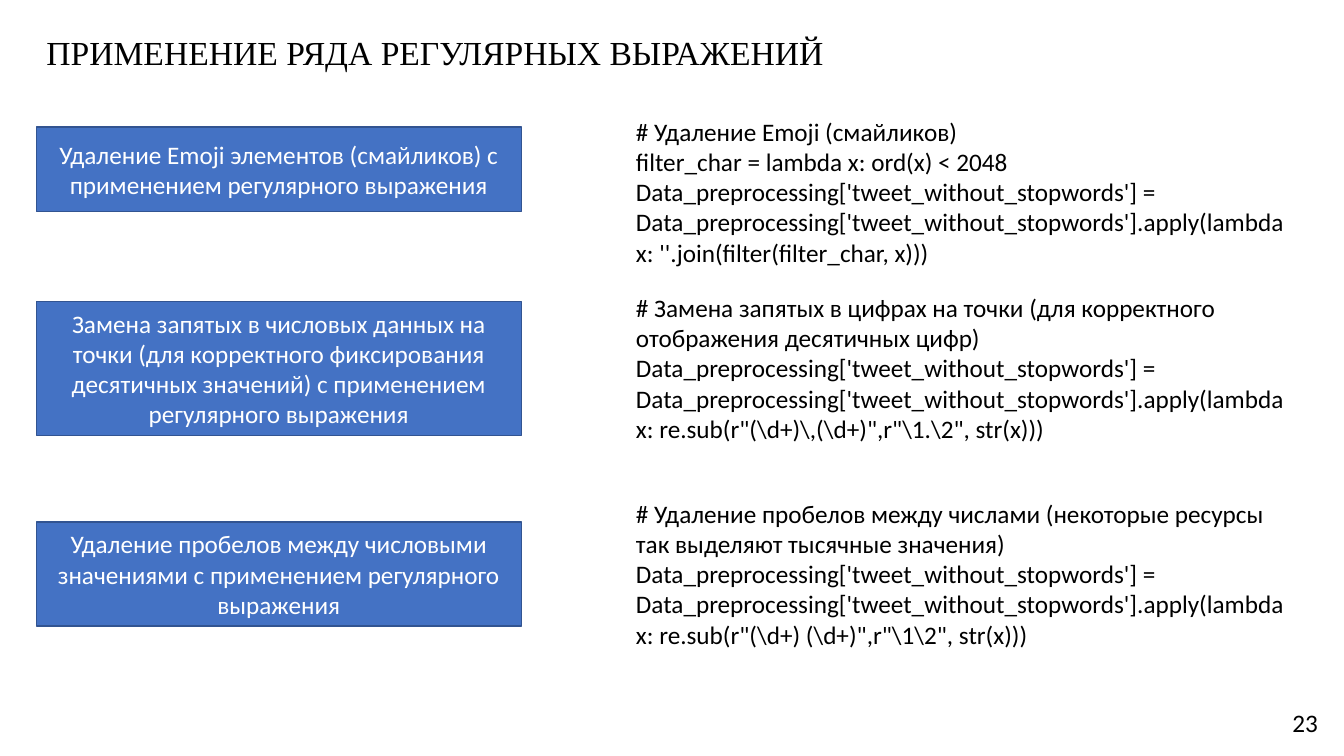
from dataclasses import dataclass

from pptx import Presentation
from pptx.dml.color import RGBColor as Color
from pptx.enum.shapes import MSO_SHAPE as Shape
from pptx.enum.text import MSO_ANCHOR as Anchor, MSO_AUTO_SIZE as Fit, PP_ALIGN as Align
from pptx.util import Inches, Pt


@dataclass(frozen=True)
class Theme:
    ink: Color = Color.from_string("000000")
    light: Color = Color.from_string("FFFFFF")
    fill: Color = Color.from_string("4472C4")
    edge: Color = Color.from_string("325491")
    head: str = "Times New Roman"
    body: str = "Calibri"
    large: Pt = Pt(24)
    small: Pt = Pt(18)
    line: Pt = Pt(1)


class Page:
    def __init__(self, deck, theme):
        self.theme = theme
        self.slide = deck.slides.add_slide(deck.slide_layouts[5])

    def label(self, shape, lines, color, align=Align.LEFT, anchor=Anchor.TOP,
              font=None, size=None):
        frame = shape.text_frame
        frame.word_wrap = True
        frame.auto_size = Fit.NONE
        frame.vertical_anchor = anchor
        frame.text = "\n".join(lines)
        for para in frame.paragraphs:
            para.alignment = align
            para.line_spacing = 1.0
            para.space_before = Pt(0)
            para.font.name = font or self.theme.body
            para.font.size = size or self.theme.small
            para.font.color.rgb = color

    def title(self, text, left, top, width, height):
        shape = self.slide.shapes.title
        shape.left, shape.top = Inches(left), Inches(top)
        shape.width, shape.height = Inches(width), Inches(height)
        self.label(shape, [text], self.theme.ink,
                   font=self.theme.head, size=self.theme.large)

    def box(self, text, left, top, width, height):
        shape = self.slide.shapes.add_shape(
            Shape.RECTANGLE, Inches(left), Inches(top), Inches(width), Inches(height))
        shape.shadow.inherit = False
        shape.fill.solid()
        shape.fill.fore_color.rgb = self.theme.fill
        shape.line.color.rgb = self.theme.edge
        shape.line.width = self.theme.line
        self.label(shape, [text], self.theme.light, Align.CENTER, Anchor.MIDDLE)

    def text(self, lines, left, top, width, height, **style):
        shape = self.slide.shapes.add_textbox(
            Inches(left), Inches(top), Inches(width), Inches(height))
        self.label(shape, lines, self.theme.ink, **style)


DATA = "Data_preprocessing['tweet_without_stopwords']"

STEPS = [
    (1.26, 0.84,
     "Удаление Emoji элементов (смайликов) с применением регулярного выражения",
     1.1, ["# Удаление Emoji (смайликов)", "filter_char = lambda x: ord(x) < 2048"],
     "''.join(filter(filter_char, x))"),
    (2.99, 1.33,
     "Замена запятых в числовых данных на точки (для корректного фиксирования "
     "десятичных значений) с применением регулярного выражения",
     2.85, ["# Замена запятых в цифрах на точки (для корректного отображения "
            "десятичных цифр)"],
     r're.sub(r"(\d+)\,(\d+)",r"\1.\2", str(x))'),
    (5.18, 1.03,
     "Удаление пробелов между числовыми значениями с применением регулярного выражения",
     4.89, ["# Удаление пробелов между числами (некоторые ресурсы так выделяют "
            "тысячные значения)"],
     r're.sub(r"(\d+) (\d+)",r"\1\2", str(x))'),
]


def main():
    deck = Presentation()
    deck.slide_width, deck.slide_height = Inches(13.33), Inches(7.5)
    page = Page(deck, Theme())
    page.title("ПРИМЕНЕНИЕ РЯДА РЕГУЛЯРНЫХ ВЫРАЖЕНИЙ", 0.36, 0.27, 8.14, 0.5)
    for top, height, label, start, notes, call in STEPS:
        page.box(label, 0.36, top, 4.81, height)
        code = f"{DATA} = {DATA}.apply(lambda x: {call})"
        page.text([*notes, code], 6.21, start, 6.67, 1.62)
    page.text(["23"], 10.17, 6.97, 3, 0.4, align=Align.RIGHT, anchor=Anchor.MIDDLE)
    deck.save("out.pptx")


if __name__ == "__main__":
    main()
